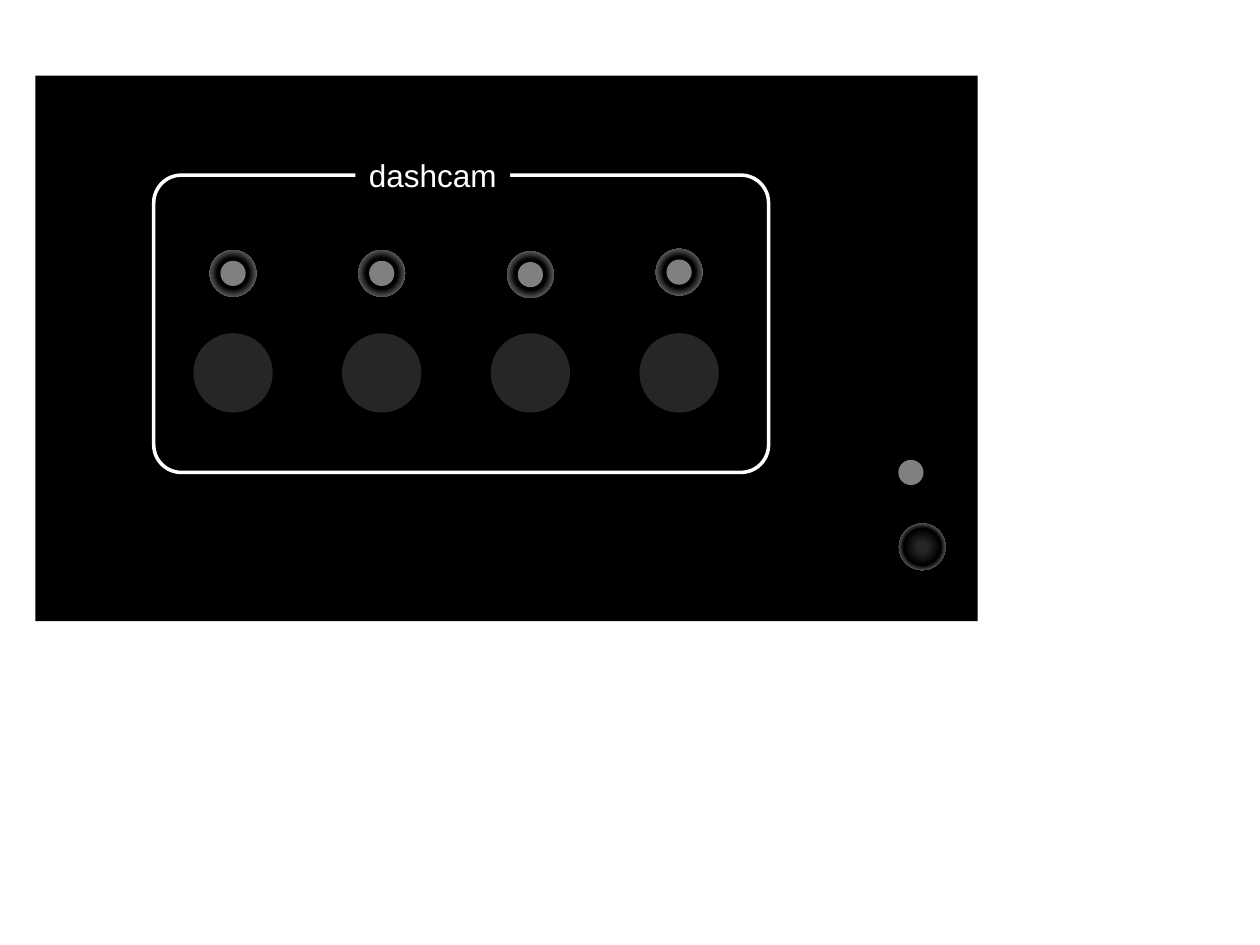
from dataclasses import dataclass

from lxml import etree
from pptx import Presentation
from pptx.dml.color import RGBColor
from pptx.enum.shapes import MSO_SHAPE
from pptx.enum.text import MSO_ANCHOR, MSO_AUTO_SIZE, PP_ALIGN
from pptx.oxml.ns import qn
from pptx.util import Inches, Pt

RECTANGLE = MSO_SHAPE.RECTANGLE
ROUNDED = MSO_SHAPE.ROUNDED_RECTANGLE
OVAL = MSO_SHAPE.OVAL
CENTER = PP_ALIGN.CENTER
MIDDLE = MSO_ANCHOR.MIDDLE
FIT_SHAPE = MSO_AUTO_SIZE.SHAPE_TO_FIT_TEXT


@dataclass(frozen=True)
class Theme:
    panel: str = "000000"
    button: str = "262626"
    light: str = "808080"
    outline: str = "FFFFFF"
    font: str = "Arial"
    label_size: int = 18
    outline_width: int = 2
    led_stops: tuple = ((0, "0D0D0D"), (47, "000000"), (82, "808080"))
    knob_stops: tuple = ((16, "262626"), (56, "000000"), (80, "808080"))


class PanelBuilder:
    def __init__(self, slide, theme):
        self.slide = slide
        self.theme = theme

    def shape(self, kind, left, top, width, height, fill=None, parent=None):
        shapes = (parent or self.slide).shapes
        shape = shapes.add_shape(kind, Inches(left), Inches(top), Inches(width), Inches(height))
        shape.shadow.inherit = False
        shape.line.fill.background()
        if fill:
            shape.fill.solid()
            shape.fill.fore_color.rgb = RGBColor.from_string(fill)
        else:
            shape.fill.background()
        return shape

    def circle(self, center_x, center_y, diameter, fill=None, parent=None):
        left, top = center_x - diameter / 2, center_y - diameter / 2
        return self.shape(OVAL, left, top, diameter, diameter, fill, parent)

    def frame(self, left, top, width, height, corner):
        shape = self.shape(ROUNDED, left, top, width, height)
        shape.adjustments[0] = corner
        shape.line.color.rgb = RGBColor.from_string(self.theme.outline)
        shape.line.width = Pt(self.theme.outline_width)

    def label(self, text, left, top, width, height):
        shape = self.shape(RECTANGLE, left, top, width, height, self.theme.panel)
        frame = shape.text_frame
        frame_format = {"word_wrap": False, "auto_size": FIT_SHAPE, "vertical_anchor": MIDDLE}
        for name, value in frame_format.items():
            setattr(frame, name, value)
        paragraph = frame.paragraphs[0]
        paragraph.alignment = CENTER
        run = paragraph.add_run()
        run.text = text
        for name, value in {"name": self.theme.font, "size": Pt(self.theme.label_size)}.items():
            setattr(run.font, name, value)
        run.font.color.rgb = RGBColor.from_string(self.theme.outline)

    def radial_fill(self, shape, stops):
        shape.fill.gradient()
        gradient = shape.element.spPr.find(qn("a:gradFill"))
        for child in list(gradient):
            gradient.remove(child)
        stop_list = etree.SubElement(gradient, qn("a:gsLst"))
        for position, color in stops:
            stop = etree.SubElement(stop_list, qn("a:gs"), pos=str(position * 1000))
            etree.SubElement(stop, qn("a:srgbClr"), val=color)
        radial = etree.SubElement(gradient, qn("a:path"), path="circle")
        etree.SubElement(radial, qn("a:fillToRect"), l="50000", t="50000", r="50000", b="50000")

    def knob(self, center_x, center_y, stops, parent=None):
        self.circle(center_x, center_y, 0.39, self.theme.panel, parent)
        ring = self.circle(center_x, center_y, 0.37, parent=parent)
        self.radial_fill(ring, stops)

    def light(self, center_x, center_y, parent=None):
        self.circle(center_x, center_y, 0.2, self.theme.light, parent)

    def led(self, center_x, center_y):
        group = self.slide.shapes.add_group_shape()
        self.knob(center_x, center_y, self.theme.led_stops, group)
        self.light(center_x, center_y, group)


def main():
    presentation = Presentation()
    presentation.slide_width = Inches(10)
    presentation.slide_height = Inches(7.5)
    slide = presentation.slides.add_slide(presentation.slide_layouts[6])
    theme = Theme()
    builder = PanelBuilder(slide, theme)

    builder.shape(RECTANGLE, 0.28, 0.6, 7.48, 4.33, theme.panel)
    builder.frame(1.22, 1.39, 4.88, 2.36, 0.093)
    builder.label("dashcam", 2.82, 1.19, 1.23, 0.4)

    led_heights = (2.17, 2.17, 2.18, 2.16)
    columns = [1.85 + 1.18 * index for index in range(len(led_heights))]
    for center_x in columns:
        builder.circle(center_x, 2.96, 0.63, theme.button)
    for center_x, center_y in zip(columns, led_heights):
        builder.led(center_x, center_y)

    builder.knob(7.32, 4.34, theme.knob_stops)
    builder.light(7.23, 3.75)
    presentation.save("out.pptx")


if __name__ == "__main__":
    main()
